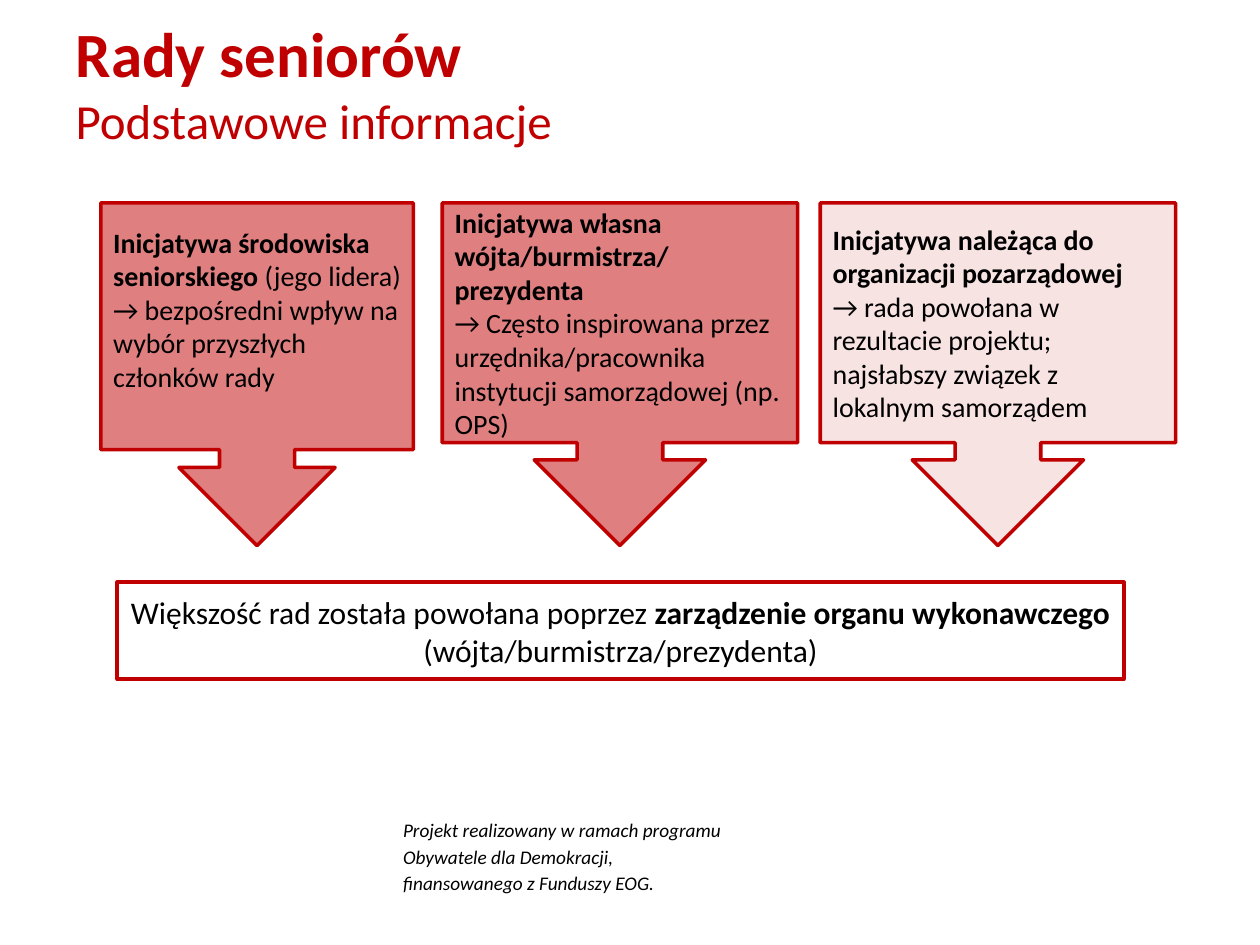
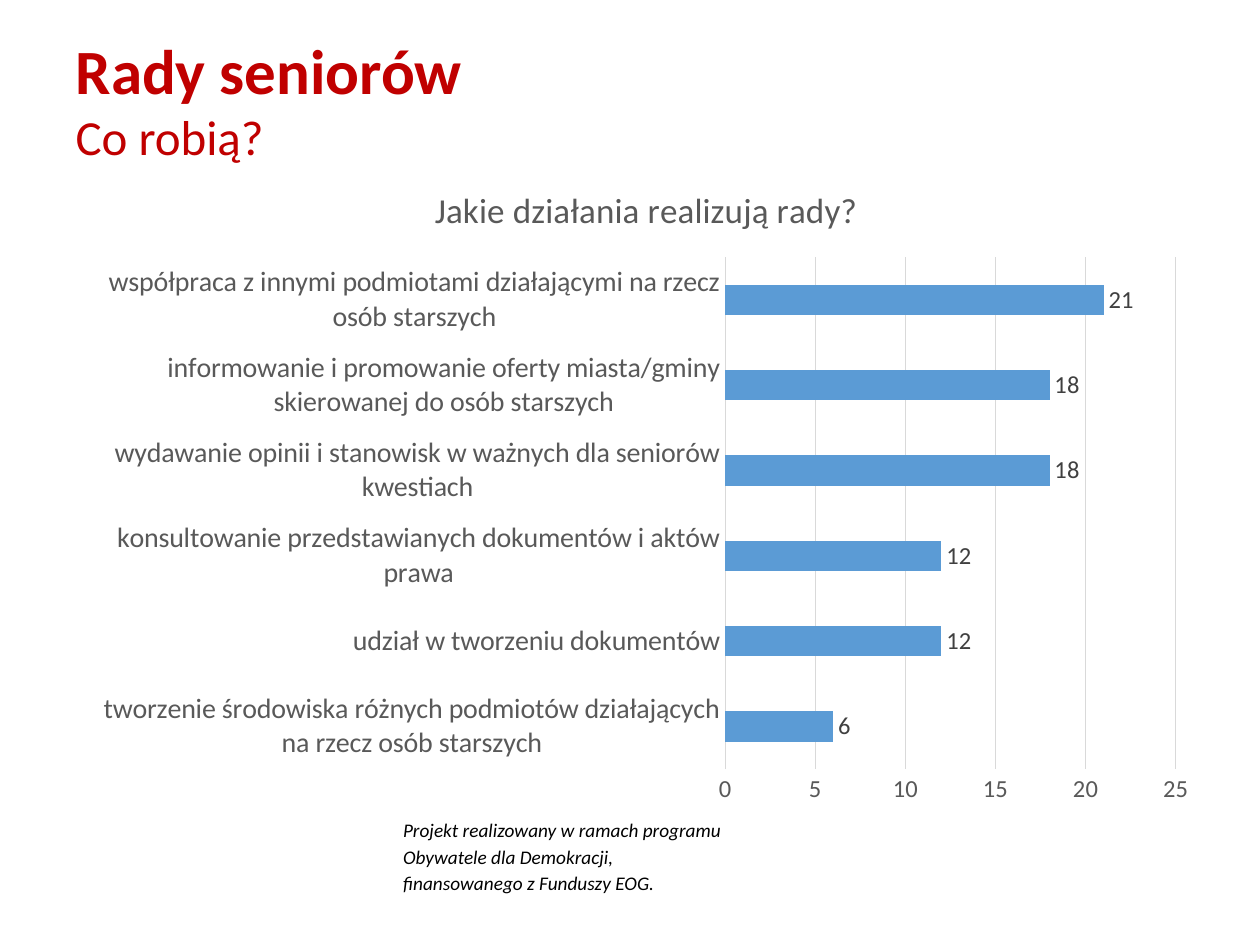
from dataclasses import dataclass

from lxml.etree import SubElement
from pptx import Presentation
from pptx.chart.data import CategoryChartData
from pptx.dml.color import RGBColor
from pptx.enum.chart import XL_CHART_TYPE, XL_LABEL_POSITION, XL_TICK_MARK
from pptx.enum.shapes import MSO_SHAPE
from pptx.enum.text import MSO_ANCHOR, MSO_AUTO_SIZE, PP_ALIGN
from pptx.oxml.ns import qn
from pptx.util import Pt

PX = 9144
FONT = "Calibri"
COLORS = {
    "red": "C00000",
    "black": "000000",
    "white": "FFFFFF",
    "bar": "5B9BD5",
    "axis": "595959",
    "grid": "D9D9D9",
    "label": "404040",
}


@dataclass(frozen=True)
class Box:
    x: int
    y: int
    w: int
    h: int

    def emu(self) -> tuple[int, int, int, int]:
        return self.x * PX, self.y * PX, self.w * PX, self.h * PX


@dataclass(frozen=True)
class Run:
    text: str
    bold: bool = False
    size: int | None = None


@dataclass(frozen=True)
class Callout:
    box: Box
    adjustments: tuple[float, ...]
    opacity: int
    heading: list[Run]
    detail: str
    bottom_inset: int = 5


CALLOUT_ADJ = (0.25, 0.25, 0.25, 0.7)
CALLOUTS = [
    Callout(
        Box(80, 161, 248, 272), (0.24, 0.25, 0.25, 0.72), 50,
        [Run("Inicjatywa środowiska seniorskiego ", True), Run("(jego lidera)")],
        "→ bezpośredni wpływ na wybór przyszłych członków rady",
        bottom_inset=32,
    ),
    Callout(
        Box(351, 161, 282, 272), CALLOUT_ADJ, 50,
        [Run("Inicjatywa własna wójta/burmistrza/ prezydenta", True)],
        "→ Często inspirowana przez urzędnika/pracownika instytucji samorządowej (np. OPS)",
    ),
    Callout(
        Box(651, 161, 282, 272), CALLOUT_ADJ, 11,
        [Run("Inicjatywa należąca do organizacji pozarządowej", True)],
        "→ rada powołana w rezultacie projektu; najsłabszy związek z lokalnym samorządem",
    ),
]

ACTIVITIES = {
    "tworzenie środowiska różnych podmiotów działających na rzecz osób starszych": 6,
    "udział w tworzeniu dokumentów": 12,
    "konsultowanie przedstawianych dokumentów i aktów prawa": 12,
    "wydawanie opinii i stanowisk w ważnych dla seniorów kwestiach": 18,
    "informowanie i promowanie oferty miasta/gminy skierowanej do osób starszych": 18,
    "współpraca z innymi podmiotami działającymi na rzecz osób starszych": 21,
}
PLOT_LAYOUT = {"x": 0.57, "y": 0.15, "w": 0.4, "h": 0.78}


def rgb(name: str) -> RGBColor:
    return RGBColor.from_string(COLORS[name])


def set_font(font, size: int, color: str, bold: bool = False, italic: bool = False) -> None:
    font.name = FONT
    font.size = Pt(size)
    font.bold = bold
    font.italic = italic
    font.color.rgb = rgb(color)


def write(tf, paragraphs: list[list[Run]], *, size: int, color: str = "black",
          italic: bool = False, align=PP_ALIGN.LEFT, anchor=MSO_ANCHOR.MIDDLE,
          spacing: float = 1.0) -> None:
    tf.word_wrap = True
    tf.auto_size = MSO_AUTO_SIZE.NONE
    tf.vertical_anchor = anchor
    for i, runs in enumerate(paragraphs):
        p = tf.add_paragraph() if i else tf.paragraphs[0]
        p.alignment = align
        p.line_spacing = spacing
        for run in runs:
            if run.text == "\n":
                p.add_line_break()
                continue
            r = p.add_run()
            r.text = run.text
            set_font(r.font, run.size or size, color, run.bold, italic)


def add_outlined(s, kind, box: Box, fill: str, opacity: int = 100):
    sp = s.shapes.add_shape(kind, *box.emu())
    sp.shadow.inherit = False
    sp.fill.solid()
    sp.fill.fore_color.rgb = rgb(fill)
    sp.line.color.rgb = rgb("red")
    sp.line.width = Pt(2)
    if opacity < 100:
        clr = sp._element.spPr.find(qn("a:solidFill"))[0]
        SubElement(clr, qn("a:alpha")).set("val", str(opacity * 1000))
    return sp


def add_callout(s, callout: Callout) -> None:
    sp = add_outlined(s, MSO_SHAPE.DOWN_ARROW_CALLOUT, callout.box, "red", callout.opacity)
    for i, value in enumerate(callout.adjustments):
        sp.adjustments[i] = value
    sp.text_frame.margin_bottom = callout.bottom_inset * PX
    write(sp.text_frame, [callout.heading, [Run(callout.detail)]], size=16)


def add_base_slide(prs, subtitle: str, title_top: int):
    s = prs.slides.add_slide(prs.slide_layouts[5])
    title = s.shapes.title
    title.left, title.top, title.width, title.height = Box(50, title_top, 820, 106).emu()
    write(title.text_frame, [[Run("Rady seniorów", True, 36), Run("\n"), Run(subtitle)]],
          size=28, color="red")
    footer = s.shapes.add_textbox(*Box(310, 642, 278, 74).emu())
    write(footer.text_frame,
          [[Run("Projekt realizowany w ramach programu Obywatele dla Demokracji, "
                "finansowanego z Funduszy EOG.")]],
          size=11, italic=True, anchor=MSO_ANCHOR.TOP, spacing=1.15)
    return s


def place_plot(chart) -> None:
    area = chart._chartSpace.chart.plotArea
    for old in area.findall(qn("c:layout")):
        area.remove(old)
    layout = SubElement(area, qn("c:layout"))
    area.insert(0, layout)
    manual = SubElement(layout, qn("c:manualLayout"))
    settings = {"layoutTarget": "inner", "xMode": "edge", "yMode": "edge", **PLOT_LAYOUT}
    for tag, value in settings.items():
        SubElement(manual, qn(f"c:{tag}")).set("val", str(value))


def add_activity_chart(s) -> None:
    data = CategoryChartData(number_format="###0")
    data.categories = list(ACTIVITIES)
    data.add_series("Series 1", list(ACTIVITIES.values()))
    chart = s.shapes.add_chart(XL_CHART_TYPE.BAR_CLUSTERED,
                               *Box(66, 126, 894, 521).emu(), data).chart
    set_font(chart.font, 10, "black")
    chart.has_legend = False
    chart.has_title = True
    p = chart.chart_title.text_frame.paragraphs[0]
    r = p.add_run()
    r.text = "Jakie działania realizują rady?"
    set_font(r.font, 20, "axis")

    plot = chart.plots[0]
    plot.gap_width = 182
    plot.vary_by_categories = False
    series = plot.series[0]
    series.format.fill.solid()
    series.format.fill.fore_color.rgb = rgb("bar")
    labels = series.data_labels
    labels.show_value = True
    labels.position = XL_LABEL_POSITION.OUTSIDE_END
    labels.number_format = "###0"
    labels.number_format_is_linked = False
    set_font(labels.font, 14, "label")

    cats, vals = chart.category_axis, chart.value_axis
    for axis, size in ((cats, 16), (vals, 14)):
        axis.major_tick_mark = axis.minor_tick_mark = XL_TICK_MARK.NONE
        set_font(axis.tick_labels.font, size, "axis")
    vals.minimum_scale, vals.maximum_scale, vals.major_unit = 0, 25, 5
    vals.has_major_gridlines = True
    vals.tick_labels.number_format = "###0"
    vals.tick_labels.number_format_is_linked = False
    vals.format.line.fill.background()
    for line in (cats.format.line, vals.major_gridlines.format.line):
        line.color.rgb = rgb("grid")
        line.width = Pt(0.75)
    place_plot(chart)


def build_initiatives(prs) -> None:
    s = add_base_slide(prs, "Podstawowe informacje", 12)
    banner = add_outlined(s, MSO_SHAPE.RECTANGLE, Box(93, 462, 799, 77), "white")
    write(banner.text_frame,
          [[Run("Większość rad została powołana poprzez "),
            Run("zarządzenie organu wykonawczego ", True),
            Run("(wójta/burmistrza/prezydenta)")]],
          size=18, align=PP_ALIGN.CENTER)
    for callout in CALLOUTS:
        add_callout(s, callout)


def build_activities(prs) -> None:
    s = add_base_slide(prs, "Co robią?", 25)
    add_activity_chart(s)


def main() -> None:
    prs = Presentation()
    prs.slide_width, prs.slide_height = 1000 * PX, 750 * PX
    build_initiatives(prs)
    build_activities(prs)
    prs.save("out.pptx")


if __name__ == "__main__":
    main()
